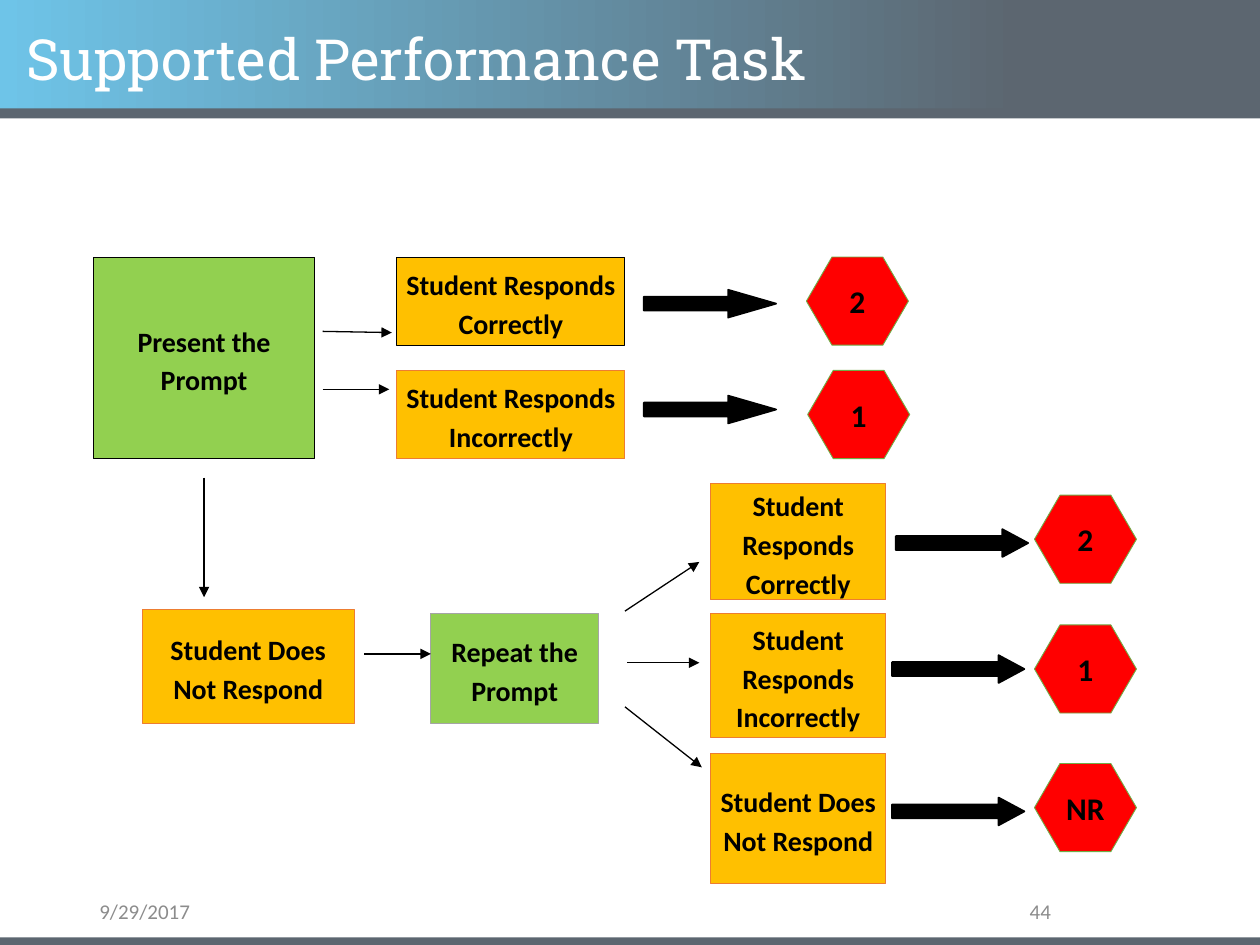
from pptx import Presentation
from pptx.dml.color import RGBColor
from pptx.enum import shapes, text
from pptx.oxml import parse_xml
from pptx.oxml.ns import nsdecls
from pptx.util import Inches, Pt

BLACK = RGBColor(0x00, 0x00, 0x00)
WHITE = RGBColor(0xFF, 0xFF, 0xFF)
SKY = RGBColor(0x6E, 0xC4, 0xE8)
SLATE = RGBColor(0x5C, 0x66, 0x70)
GRAY = RGBColor(0x8C, 0x8C, 0x8C)
SILVER = RGBColor(0xA5, 0xA5, 0xA5)
LIME = RGBColor(0x92, 0xD0, 0x50)
AMBER = RGBColor(0xFF, 0xC0, 0x00)
ORANGE = RGBColor(0xED, 0x7D, 0x31)
RED = RGBColor(0xFF, 0x00, 0x00)
GREEN = RGBColor(0x70, 0xAD, 0x47)

TITLE = "Supported Performance Task"

# words, (left, top, width, height), fill, outline
STEPS = [
    ("Present the Prompt", (0.74, 2.04, 1.76, 1.6), LIME, BLACK),
    ("Student Responds Correctly", (3.15, 2.04, 1.81, 0.7), AMBER, BLACK),
    ("Student Responds Incorrectly", (3.15, 2.94, 1.81, 0.7), AMBER, ORANGE),
    ("Student Does Not Respond", (1.13, 4.84, 1.68, 0.9), AMBER, ORANGE),
    ("Repeat the Prompt", (3.42, 4.87, 1.33, 0.87), LIME, SILVER),
    ("Student Responds Correctly", (5.64, 3.84, 1.39, 0.92), AMBER, ORANGE),
    ("Student Responds Incorrectly", (5.64, 4.87, 1.39, 0.98), AMBER, ORANGE),
    ("Student Does Not Respond", (5.64, 5.98, 1.39, 1.03), AMBER, ORANGE),
]

# score, hexagon left and top, block arrow left and top, arrowhead length
SCORES = [
    ("2", (6.4, 2.04), (5.11, 2.3), 1.73),
    ("1", (6.41, 2.94), (5.11, 3.14), 1.73),
    ("2", (8.21, 3.93), (7.11, 4.2), 0.93),
    ("1", (8.21, 4.96), (7.08, 5.2), 0.93),
    ("NR", (8.21, 6.06), (7.08, 6.33), 0.93),
]
HEXAGON_SIZE = (0.81, 0.7)
ARROW_SIZE = (1.05, 0.22)

# start x, y, end x, y
LINKS = [
    (2.56, 2.63, 3.11, 2.64),
    (2.56, 3.09, 3.09, 3.09),
    (1.62, 3.79, 1.62, 4.74),
    (2.89, 5.19, 3.42, 5.19),
    (4.96, 4.85, 5.55, 4.46),
    (4.98, 5.26, 5.55, 5.26),
    (4.96, 5.61, 5.57, 6.09),
]

FOOTERS = [
    ("9/29/2017", (0.69, 7.12, 2.25, 0.23), text.PP_ALIGN.LEFT),
    ("44", (7.06, 7.12, 1.38, 0.23), text.PP_ALIGN.RIGHT),
]


def add_shape(page, kind, place, fill, outline=None, weight=0.5):
    shape = page.shapes.add_shape(kind, *map(Inches, place))
    shape.shadow.inherit = False
    shape.fill.solid()
    shape.fill.fore_color.rgb = fill
    if outline is None:
        shape.line.fill.background()
    else:
        shape.line.color.rgb = outline
        shape.line.width = Pt(weight)
    return shape


def write(shape, words, size, color, align, font="Calibri", bold=False,
          spacing=1.0, insets=(0.1, 0.05), wrap=True):
    frame = shape.text_frame
    frame.word_wrap = wrap
    frame.auto_size = text.MSO_AUTO_SIZE.NONE
    frame.vertical_anchor = text.MSO_ANCHOR.MIDDLE
    frame.margin_left = frame.margin_right = Inches(insets[0])
    frame.margin_top = frame.margin_bottom = Inches(insets[1])
    para = frame.paragraphs[0]
    para.alignment = align
    para.line_spacing = spacing
    span = para.add_run()
    span.text = words
    span.font.name = font
    span.font.size = Pt(size)
    span.font.bold = bold
    span.font.color.rgb = color


def add_link(page, ends):
    link = page.shapes.add_connector(
        shapes.MSO_CONNECTOR.STRAIGHT, *map(Inches, ends))
    link.line.color.rgb = BLACK
    link.line.width = Pt(0.75)
    link.line._get_or_add_ln().append(
        parse_xml(f'<a:tailEnd {nsdecls("a")} type="triangle"/>'))
    link.element.spPr.append(parse_xml(f'<a:effectLst {nsdecls("a")}/>'))


def add_header(page):
    kind = shapes.MSO_SHAPE.RECTANGLE
    banner = add_shape(page, kind, (0, 0, 10, 0.87), SKY)
    banner.fill.gradient()
    banner.fill.gradient_angle = 0
    for stop, color, position in zip(
            banner.fill.gradient_stops, (SKY, SLATE), (0, 0.81)):
        stop.color.rgb = color
        stop.position = position
    for top in (0.86, 7.44):
        bar = add_shape(page, kind, (0, top, 10, 0.08), SLATE)

    title = page.shapes.title
    title.left, title.top, title.width, title.height = map(
        Inches, (0.11, 0.21, 9.32, 0.57))
    write(title, TITLE, 32.4, WHITE, text.PP_ALIGN.LEFT,
          font="Roboto Slab", spacing=0.9)
    bar.element.addnext(title.element)  # bring the title in front of the bands


def main():
    deck = Presentation()
    deck.slide_width, deck.slide_height = Inches(10), Inches(7.5)
    page = deck.slides.add_slide(deck.slide_layouts[5])
    add_header(page)

    for words, place, align in FOOTERS:
        box = page.shapes.add_textbox(*map(Inches, place))
        write(box, words, 12, GRAY, align)

    for words, place, fill, outline in STEPS:
        box = add_shape(page, shapes.MSO_SHAPE.RECTANGLE, place, fill, outline)
        write(box, words, 16, BLACK, text.PP_ALIGN.CENTER, bold=True,
              spacing=1.15, insets=(0.07, 0.04))

    for score, hexagon_at, arrow_at, head in SCORES:
        arrow = add_shape(page, shapes.MSO_SHAPE.RIGHT_ARROW,
                          arrow_at + ARROW_SIZE, BLACK, BLACK, 1)
        arrow.adjustments[1] = head
        hexagon = add_shape(page, shapes.MSO_SHAPE.HEXAGON,
                            hexagon_at + HEXAGON_SIZE, RED, GREEN)
        hexagon.adjustments[0] = 0.29
        write(hexagon, score, 18, BLACK, text.PP_ALIGN.CENTER, bold=True,
              insets=(0, 0), wrap=False)

    for ends in LINKS:
        add_link(page, ends)

    deck.save("out.pptx")


if __name__ == "__main__":
    main()
